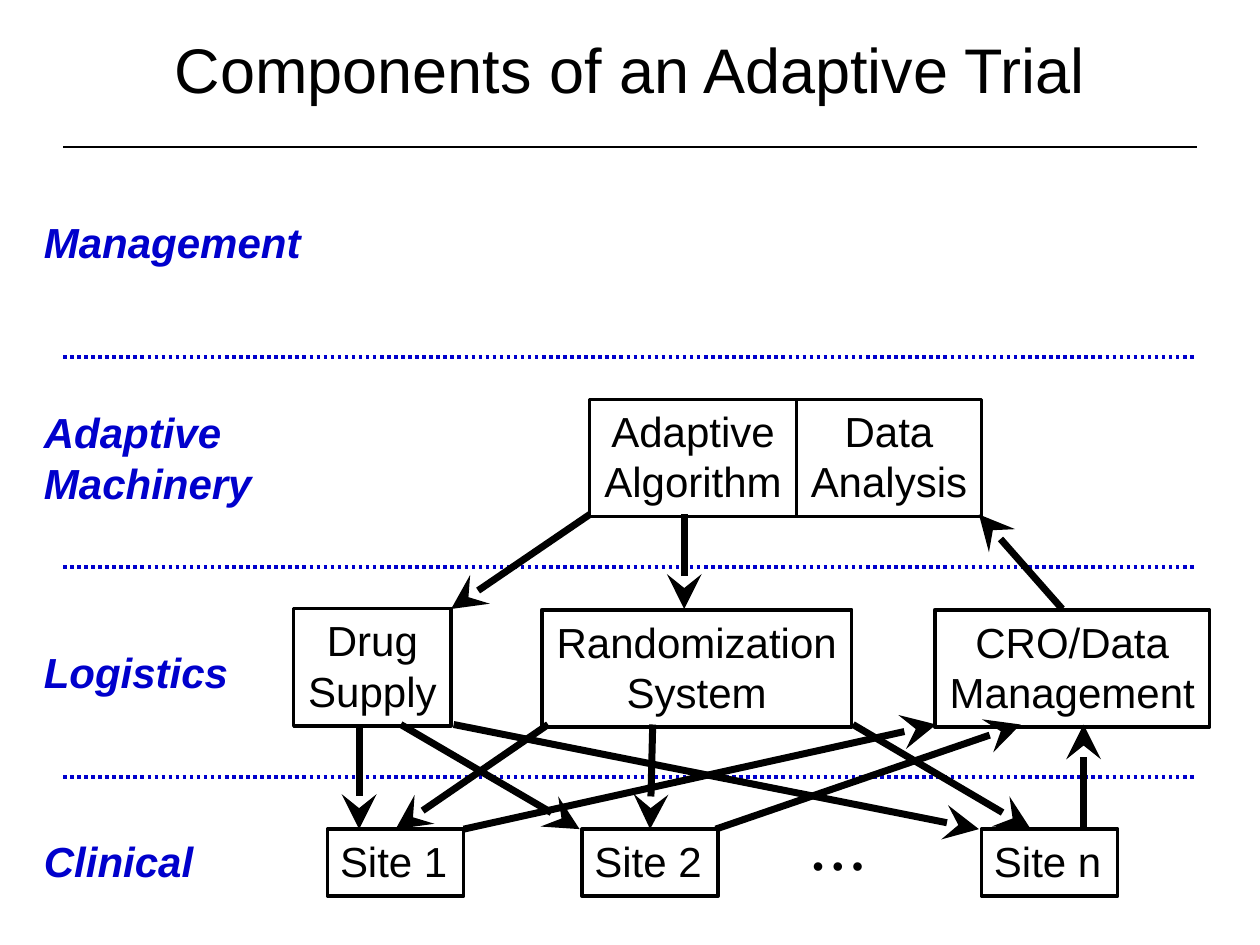
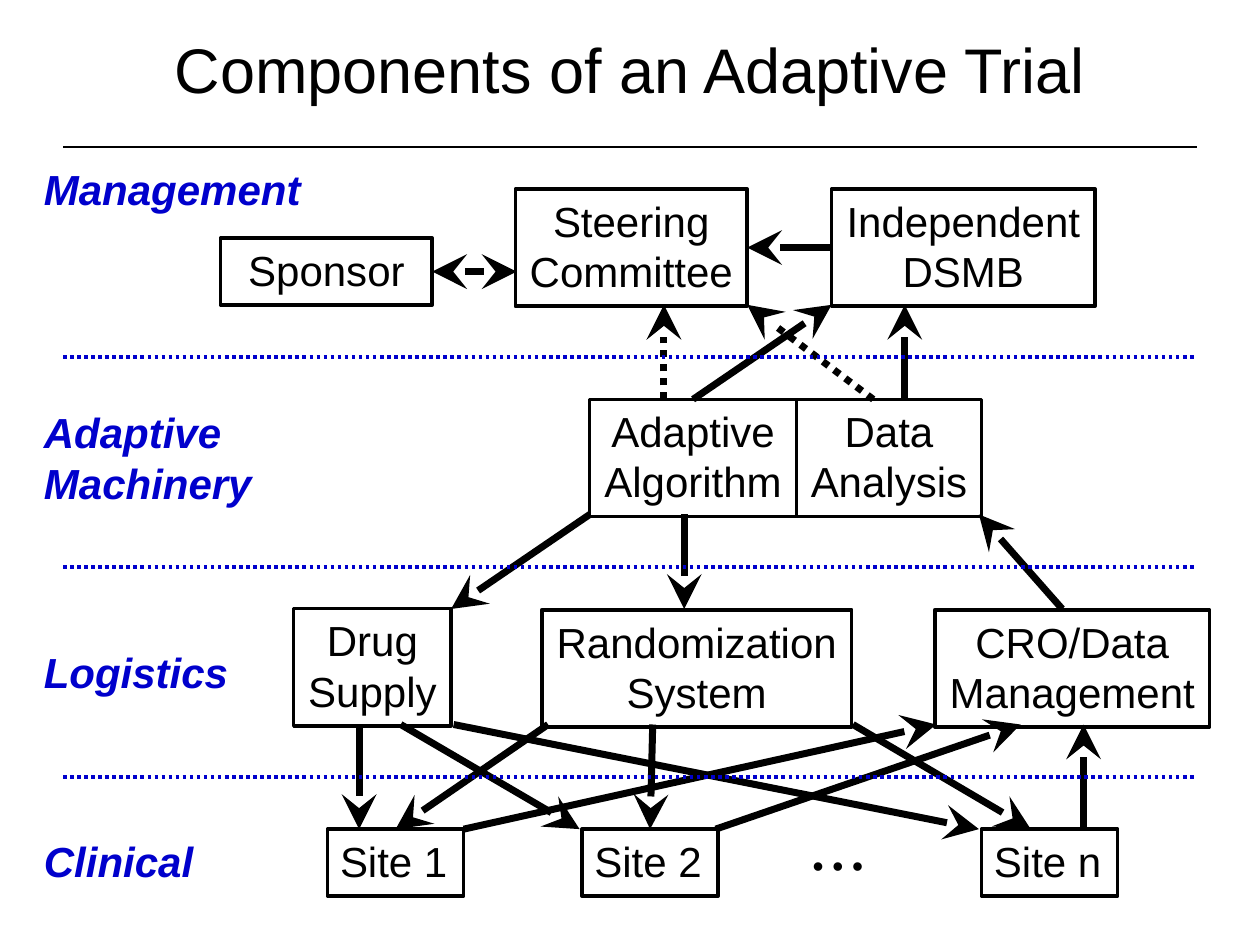
from lxml import etree
from pptx import Presentation
from pptx import util as u
from pptx.dml import color
from pptx.enum import dml, shapes, text
from pptx.oxml import ns

COLORS = {"ink": "000000", "accent": "0000CC"}
FONT = "Arial"
TITLE = "Components of an Adaptive Trial"
TITLE_AREA = (36, -6, 648, 90)
RULE_Y = 84
BAND_YS = [204 + 120 * step for step in range(3)]
MARGINS = (36, 684)
SNAP = 4

TITLE_FONT = {"size": u.Pt(36), "name": FONT}
BODY_FONT = {"size": u.Pt(24), "name": FONT}
DOTS_FONT = {"size": u.Pt(18), "name": FONT}
LAYER_FONT = {**BODY_FONT, "bold": True, "italic": True}

LAYERS = [
    (["Adaptive", "Machinery"], (18, 229, 133.2, 64.8)),
    (["Logistics"], (18, 365.8, 119.5, 36)),
    (["Clinical"], (18, 473.8, 100.1, 36)),
]
MANAGEMENT_AREAS = [(18, 120.2, 161.3, 36), (18, 90, 161.3, 36)]

TRIAL_BOXES = [
    (["Adaptive", "Algorithm"], (337, 228.2, 118.1, 67)),
    (["Data", "Analysis"], (455.1, 228.2, 105.8, 67)),
    (["Drug", "Supply"], (167.8, 347.8, 90, 67)),
    (["Randomization", "System"], (309.6, 348.5, 177.1, 67)),
    (["CRO/Data", "Management"], (534.2, 348.5, 157, 67)),
]
SITE_Y, SITE_SIZE = 473.8, (77.8, 38.2)
SITES = [("Site 1", 187.2), ("Site 2", 332.6), ("Site n", 560.9)]
DOTS = ("• • •", (457.2, 480.2, 49, 28.8))
MANAGEMENT_BOXES = [
    (["Sponsor"], (126, 136.1, 121, 38.2)),
    (["Steering", "Committee"], (294.5, 108, 132.5, 67)),
    (["Independent", "DSMB"], (475.2, 108, 150.5, 67)),
]

MACHINERY_TOP, MANAGEMENT_BOTTOM = 228.2, 174.2
MACHINERY_BOTTOM, LOGISTICS_TOP = 294, 348
LOGISTICS_BOTTOM = 414

TRIAL_ARROWS = [
    (MACHINERY_BOTTOM, LOGISTICS_TOP, [(391, 391), (337, 257.8)]),
    (LOGISTICS_TOP, MACHINERY_BOTTOM, [(607, 559.4)]),
    (LOGISTICS_BOTTOM, SITE_Y, [(205.2, 205.2), (229, 331.2), (259.2, 559.4),
                                (373, 373), (313.2, 229), (487.4, 589)]),
    (SITE_Y, LOGISTICS_BOTTOM, [(619.2, 619.2), (409, 583.2), (265, 535)]),
]
REPORT_ARROWS = [(MACHINERY_TOP, MANAGEMENT_BOTTOM, [(397.4, 475.2), (517, 517)])]
DOTTED_ARROWS = [(MACHINERY_TOP, MANAGEMENT_BOTTOM, [(499, 427), (379.4, 379.4)])]
SPONSOR_LINK = ((247, 155.2), (295.2, 155.2))
MONITORING_LINK = ((475.2, 140), (427, 140))


def rgb(name):
    return color.RGBColor.from_string(COLORS[name])


def write(shape, lines, font, ink, align, anchor=text.MSO_ANCHOR.TOP):
    frame = shape.text_frame
    frame.vertical_anchor = anchor
    for number, line in enumerate(lines):
        para = frame.add_paragraph() if number else frame.paragraphs[0]
        para.alignment = align
        span = para.add_run()
        span.text = line
        for key, value in font.items():
            setattr(span.font, key, value)
        span.font.color.rgb = rgb(ink)


def fit(shape):
    shape.text_frame.word_wrap = False
    shape.text_frame.auto_size = text.MSO_AUTO_SIZE.SHAPE_TO_FIT_TEXT


def add_label(page, lines, area, font, ink):
    label = page.shapes.add_textbox(*map(u.Pt, area))
    write(label, lines, font, ink, text.PP_ALIGN.LEFT)
    fit(label)


def add_title(page):
    title = page.shapes.add_textbox(*map(u.Pt, TITLE_AREA))
    title.text_frame.word_wrap = True
    write(title, [TITLE], TITLE_FONT, "ink", text.PP_ALIGN.CENTER,
          text.MSO_ANCHOR.MIDDLE)


def add_box(page, lines, area, align=text.PP_ALIGN.CENTER):
    box = page.shapes.add_shape(shapes.MSO_SHAPE.RECTANGLE, *map(u.Pt, area))
    box.shadow.inherit = False
    box.fill.background()
    box.line.color.rgb = rgb("ink")
    box.line.width = u.Pt(2)
    write(box, lines, BODY_FONT, "ink", align)
    fit(box)
    return box, area


def add_line(page, start, end, ink, width, dotted=False, heads=()):
    line = page.shapes.add_connector(
        shapes.MSO_CONNECTOR.STRAIGHT, *map(u.Pt, (*start, *end)))
    line.line.color.rgb = rgb(ink)
    line.line.width = u.Pt(width)
    if dotted:
        line.line.dash_style = dml.MSO_LINE.ROUND_DOT
    outline = line.line._get_or_add_ln()
    for head in heads:
        etree.SubElement(outline, ns.qn(f"a:{head}"), type="stealth", w="lg", len="lg")
    etree.SubElement(line._element.spPr, ns.qn("a:effectLst"))
    return line


def side_middle(boxes, point):
    for box, (left, top, width, height) in boxes:
        middles = [(left + width / 2, top), (left, top + height / 2),
                   (left + width / 2, top + height), (left + width, top + height / 2)]
        for side, (x, y) in enumerate(middles):
            if abs(x - point[0]) <= SNAP and abs(y - point[1]) <= SNAP:
                return box, side
    return None


def add_arrow(page, boxes, start, end, dotted=False, heads=("tailEnd",)):
    arrow = add_line(page, start, end, "ink", 4, dotted, heads)
    for point, connect in ((start, arrow.begin_connect), (end, arrow.end_connect)):
        joint = side_middle(boxes, point)
        if joint:
            connect(*joint)


def add_arrows(page, boxes, rows, dotted=False):
    for start_y, end_y, spans in rows:
        for start_x, end_x in spans:
            add_arrow(page, boxes, (start_x, start_y), (end_x, end_y), dotted)


def add_layers(page, management_area):
    left, right = MARGINS
    add_line(page, (left, RULE_Y), (right, RULE_Y), "ink", 0.75)
    for lines, area in [(["Management"], management_area), *LAYERS]:
        add_label(page, lines, area, LAYER_FONT, "accent")
    for y in BAND_YS:
        add_line(page, (left, y), (right, y), "accent", 2, True)


def add_trial(page):
    boxes = [add_box(page, lines, area) for lines, area in TRIAL_BOXES]
    boxes += [add_box(page, [name], (left, SITE_Y, *SITE_SIZE), text.PP_ALIGN.LEFT)
              for name, left in SITES]
    add_label(page, [DOTS[0]], DOTS[1], DOTS_FONT, "ink")
    add_arrows(page, boxes, TRIAL_ARROWS)
    return boxes


def add_management(page, boxes):
    boxes = boxes + [add_box(page, lines, area) for lines, area in MANAGEMENT_BOXES]
    add_arrow(page, boxes, *SPONSOR_LINK, heads=("headEnd", "tailEnd"))
    add_arrow(page, boxes, *MONITORING_LINK)
    add_arrows(page, boxes, REPORT_ARROWS)
    add_arrows(page, boxes, DOTTED_ARROWS, dotted=True)


def main():
    deck = Presentation()
    deck.slide_width, deck.slide_height = u.Pt(720), u.Pt(540)
    blank = deck.slide_layouts[6]
    machinery, overview = [deck.slides.add_slide(blank) for _ in range(2)]

    add_title(machinery)
    add_layers(machinery, MANAGEMENT_AREAS[0])
    add_trial(machinery)

    add_title(overview)
    add_management(overview, add_trial(overview))
    add_layers(overview, MANAGEMENT_AREAS[1])

    deck.save("out.pptx")


if __name__ == "__main__":
    main()
